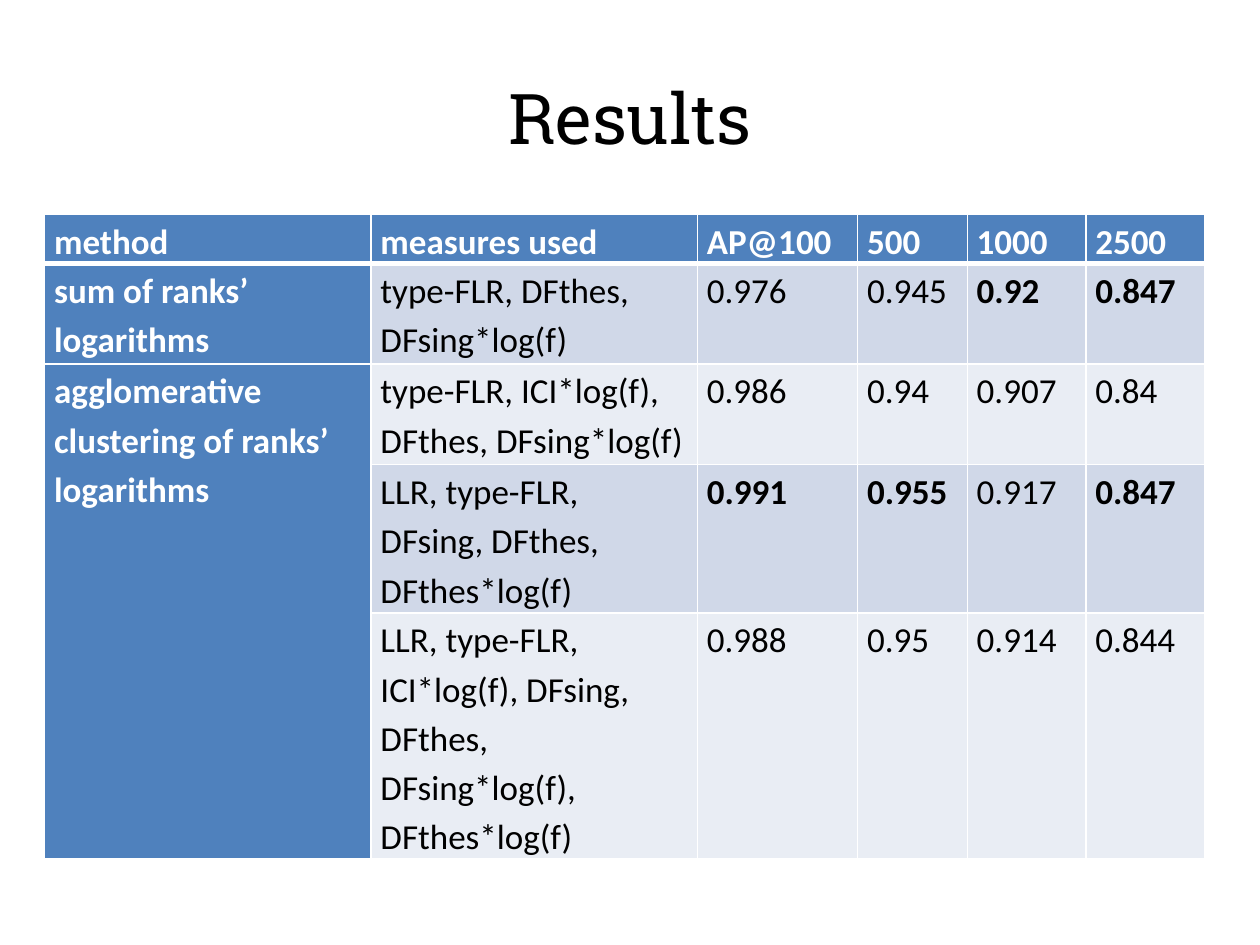
"""Build a results slide with a table of ranking methods."""
from lxml.etree import SubElement
from pptx import Presentation
from pptx.dml.color import RGBColor
from pptx.enum.text import MSO_ANCHOR as Anchor, PP_ALIGN as Align
from pptx.oxml.ns import qn
from pptx.util import Cm, Pt

COLORS = {"head": "4F81BD", "odd": "D0D8E8", "even": "E9EDF4",
          "white": "FFFFFF", "black": "000000"}
COLUMN_WIDTHS = [6.58, 6.58, 3.23, 2.21, 2.39, 2.39]
ROW_HEIGHTS = [0.99, 2.03, 2.03, 2.99, 4.96]
ROWS = [
    ["method", "measures used", "AP@100", "500", "1000", "2500"],
    ["sum of ranks’ logarithms", "type-FLR, DFthes, DFsing*log(f)",
     "0.976", "0.945", "0.92", "0.847"],
    ["agglomerative clustering of ranks’ logarithms",
     "type-FLR, ICI*log(f), DFthes, DFsing*log(f)",
     "0.986", "0.94", "0.907", "0.84"],
    ["", "LLR, type-FLR, DFsing, DFthes, DFthes*log(f)",
     "0.991", "0.955", "0.917", "0.847"],
    ["", "LLR, type-FLR, ICI*log(f), DFsing, DFthes, DFsing*log(f), DFthes*log(f)",
     "0.988", "0.95", "0.914", "0.844"],
]
BEST = {(1, 4), (1, 5), (3, 2), (3, 3), (3, 5)}


def style_font(font, name, size, color, bold=False):
    font.name, font.size, font.bold = name, Pt(size), bold
    font.color.rgb = RGBColor.from_string(COLORS[color])


def add_title(page, text):
    box = page.shapes.add_textbox(Cm(1.27), Cm(0.76), Cm(22.86), Cm(3.18))
    frame = box.text_frame
    frame.word_wrap = True
    frame.vertical_anchor = Anchor.MIDDLE
    para = frame.paragraphs[0]
    para.text = text
    para.alignment = Align.CENTER
    style_font(para.font, "Roboto Slab", 40, "black")


def add_borders(cell, bottom):
    properties = cell._tc.get_or_add_tcPr()
    for side, width in (("L", 1), ("R", 1), ("T", 1), ("B", bottom)):
        line = SubElement(properties, qn(f"a:ln{side}"), w=str(Pt(width)))
        fill = SubElement(line, qn("a:solidFill"))
        SubElement(fill, qn("a:srgbClr"), val=COLORS["white"])


def fill_cell(cell, row, column, text):
    heading = row == 0 or column == 0
    cell.margin_left = cell.margin_right = Cm(0.19)
    cell.margin_top = cell.margin_bottom = 0
    add_borders(cell, 3 if row == 0 else 1)
    shade = "head" if heading else "odd" if row % 2 else "even"
    cell.fill.solid()
    cell.fill.fore_color.rgb = RGBColor.from_string(COLORS[shade])
    if not text:
        return
    para = cell.text_frame.paragraphs[0]
    para.text = text
    para.line_spacing = 1.15
    justified = column < 2 if row == 0 else column >= 2
    para.alignment = Align.JUSTIFY if justified else Align.LEFT
    style_font(para.font, "Calibri", 20, "white" if heading else "black",
               heading or (row, column) in BEST)


def add_results(page):
    frame = page.shapes.add_table(
        len(ROWS), len(COLUMN_WIDTHS), Cm(0.9), Cm(4.32),
        Cm(sum(COLUMN_WIDTHS)), Cm(sum(ROW_HEIGHTS)))
    table = frame.table
    table.first_col = True
    table.horz_banding = False
    for column, width in zip(table.columns, COLUMN_WIDTHS):
        column.width = Cm(width)
    for row, height in zip(table.rows, ROW_HEIGHTS):
        row.height = Cm(height)
    for row, texts in enumerate(ROWS):
        for column, text in enumerate(texts):
            fill_cell(table.cell(row, column), row, column, text)
    table.cell(2, 0).merge(table.cell(4, 0))


def main():
    deck = Presentation()
    deck.slide_width, deck.slide_height = Cm(25.4), Cm(19.05)
    page = deck.slides.add_slide(deck.slide_layouts[6])
    add_title(page, "Results")
    add_results(page)
    deck.save("out.pptx")


if __name__ == "__main__":
    main()
